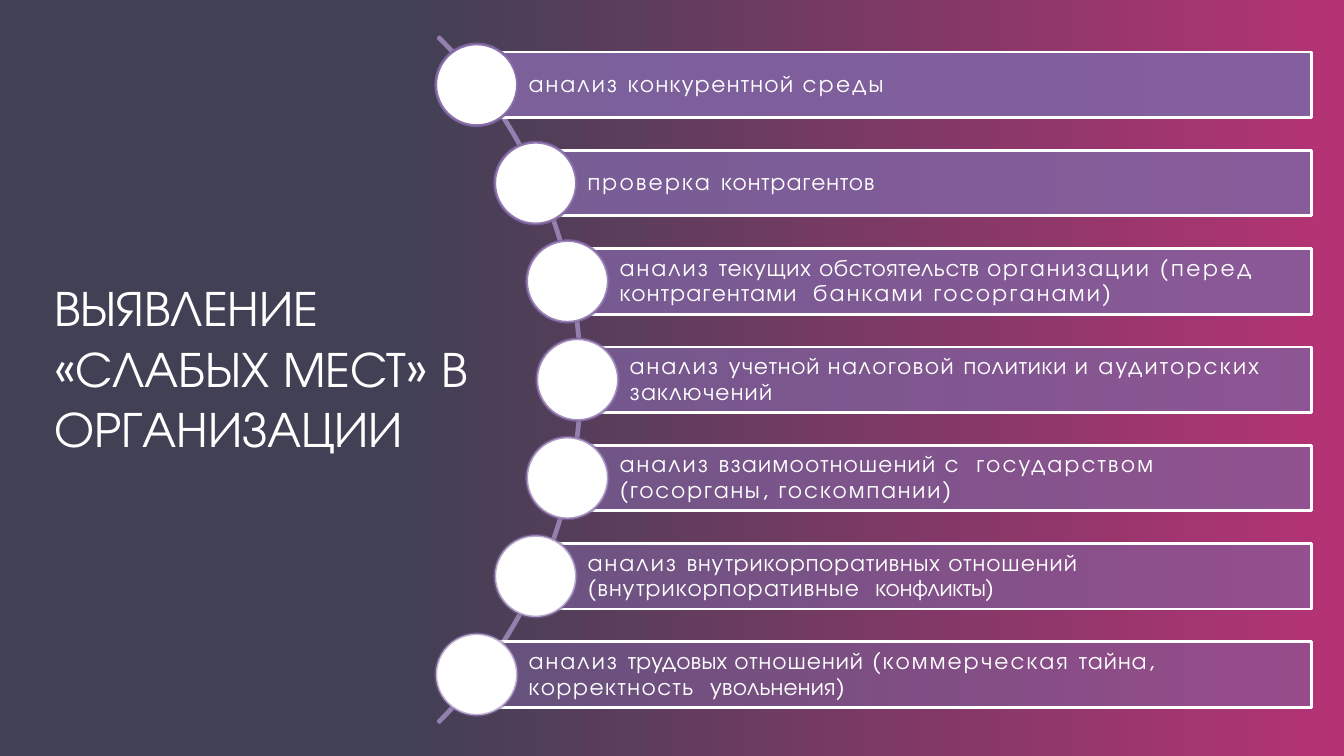
from math import sqrt

from pptx import Presentation
from pptx.dml.color import RGBColor
from pptx.enum import shapes, text
from pptx.oxml.ns import qn
from pptx.oxml.xmlchemy import OxmlElement
from pptx.util import Pt

FONT = "TeX Gyre Adventor"
WHITE = RGBColor(0xFF, 0xFF, 0xFF)
SLATE = RGBColor(0x41, 0x40, 0x54)
PINK = RGBColor(0xB5, 0x33, 0x75)
PURPLE = RGBColor(0x80, 0x64, 0xA2)
LILAC = RGBColor(0x94, 0x80, 0xAE)

TITLE = "ВЫЯВЛЕНИЕ «СЛАБЫХ МЕСТ» В ОРГАНИЗАЦИИ"
GAP = (" ", 6)
ANALYSIS = ("анализ ", 1.5)
STEPS = [
    [ANALYSIS, ("конкурентной ", 1), ("среды", 1.6)],
    [("проверка ", 1.6), ("контрагентов", 0.7)],
    [ANALYSIS, ("текущих ", 0.6), ("обстоятельств ", 0.4), ("организации ", 1.4),
     ("(перед ", 1.9), ("контрагентами", 0.9), GAP, ("банками госорганами)", 1.6)],
    [ANALYSIS, ("учетной ", 0.6), ("налоговой ", 1.1), ("политики ", 0.6), ("и ", 1.3),
     ("аудиторских ", 1.6), ("заключений", 0.9)],
    [ANALYSIS, ("взаимоотношений ", 0.9), ("с ", 4), ("государством ", 1.6),
     ("(госорганы, ", 1.3), ("госкомпании)", 1.4)],
    [ANALYSIS, ("внутрикорпоративных ", 0.6), ("отношений (внутрикорпоративные", 0.8),
     GAP, ("конфликты)", -0.2)],
    [ANALYSIS, ("трудовых ", 0.2), ("отношений ", 0.8), ("(коммерческая ", 1.5),
     ("тайна, ", 0.8), ("корректность", 1.1), GAP, ("увольнения)", 0.2)],
]


def style_run(run, size):
    """Give a run the slide's white lettering."""
    run.font.name = FONT
    run.font.size = Pt(size)
    run.font.color.rgb = WHITE


def set_opacity(shape, colour, percent):
    """Make every use of a colour in a shape's fill and line translucent."""
    for element in shape._element.spPr.iter(qn("a:srgbClr")):
        if element.get("val") == str(colour):
            alpha = OxmlElement("a:alpha")
            alpha.set("val", str(round(percent * 1000)))
            element.append(alpha)


def add_outlined(slide, kind, left, top, width, height, fill, line):
    """Add a preset shape with a two-point outline and an optional fill."""
    shape = slide.shapes.add_shape(kind, Pt(left), Pt(top), Pt(width), Pt(height))
    shape.shadow.inherit = False
    if fill is None:
        shape.fill.background()
    else:
        shape.fill.solid()
        shape.fill.fore_color.rgb = fill
    shape.line.color.rgb = line
    shape.line.width = Pt(2)
    return shape


def add_background(slide):
    """Fill the slide with a gradient from slate to pink."""
    fill = slide.background.fill
    fill.gradient()
    fill.gradient_angle = 0
    for stop, position, colour in zip(fill.gradient_stops, (0.3, 1), (SLATE, PINK)):
        stop.position = position
        stop.color.rgb = colour


def add_title(slide, left, top, width, height):
    """Place the slide title in the given box."""
    box = slide.shapes.add_textbox(Pt(left), Pt(top), Pt(width), Pt(height))
    frame = box.text_frame
    frame.word_wrap = True
    frame.auto_size = text.MSO_AUTO_SIZE.SHAPE_TO_FIT_TEXT
    frame.text = TITLE
    style_run(frame.paragraphs[0].runs[0], 36)


def add_step(slide, left, middle, right, pieces, opacity):
    """Place one labelled bar and the circle centred on its left end."""
    height, diameter = 46.8, 58.4
    bar = add_outlined(slide, shapes.MSO_SHAPE.RECTANGLE, left, middle - height / 2,
                       right - left, height, PURPLE, WHITE)
    set_opacity(bar, PURPLE, opacity)
    frame = bar.text_frame
    frame.word_wrap = True
    frame.vertical_anchor = text.MSO_ANCHOR.MIDDLE
    frame.margin_left = Pt(37.2)
    frame.margin_right = frame.margin_top = frame.margin_bottom = Pt(3.4)
    paragraph = frame.paragraphs[0]
    paragraph.alignment = text.PP_ALIGN.LEFT
    paragraph.line_spacing = 0.9
    for words, spacing in pieces:
        run = paragraph.add_run()
        run.text = words
        style_run(run, 17)
        run._r.get_or_add_rPr().set("spc", str(round(spacing * 100)))
    circle = add_outlined(slide, shapes.MSO_SHAPE.OVAL, left - diameter / 2,
                          middle - diameter / 2, diameter, diameter, WHITE, PURPLE)
    set_opacity(circle, PURPLE, opacity)


def add_curved_list(slide, centre_x, centre_y, radius, right):
    """Place the arc and the steps that follow it around its centre."""
    arc = add_outlined(slide, shapes.MSO_SHAPE.BLOCK_ARC, centre_x - radius,
                       centre_y - radius, 2 * radius, 2 * radius, None, LILAC)
    for index, value in enumerate((189, 27, 0.002)):
        arc.adjustments[index] = value
    pitch, circle_track = 70.2, radius - 2.8
    last = len(STEPS) - 1
    for index, pieces in enumerate(STEPS):
        offset = (index - last / 2) * pitch
        left = centre_x + sqrt(circle_track ** 2 - offset ** 2)
        add_step(slide, left, centre_y + offset, right, pieces, 90 - 40 * index / last)


def main():
    """Build and save the presentation."""
    presentation = Presentation()
    presentation.slide_width = Pt(960)
    presentation.slide_height = Pt(540)
    slide = presentation.slides.add_slide(presentation.slide_layouts[6])
    add_background(slide)
    add_title(slide, 31.7, 193.7, 324, 138.2)
    add_curved_list(slide, 69.1, 271.2, 346.3, 937)
    presentation.save("out.pptx")


if __name__ == "__main__":
    main()
